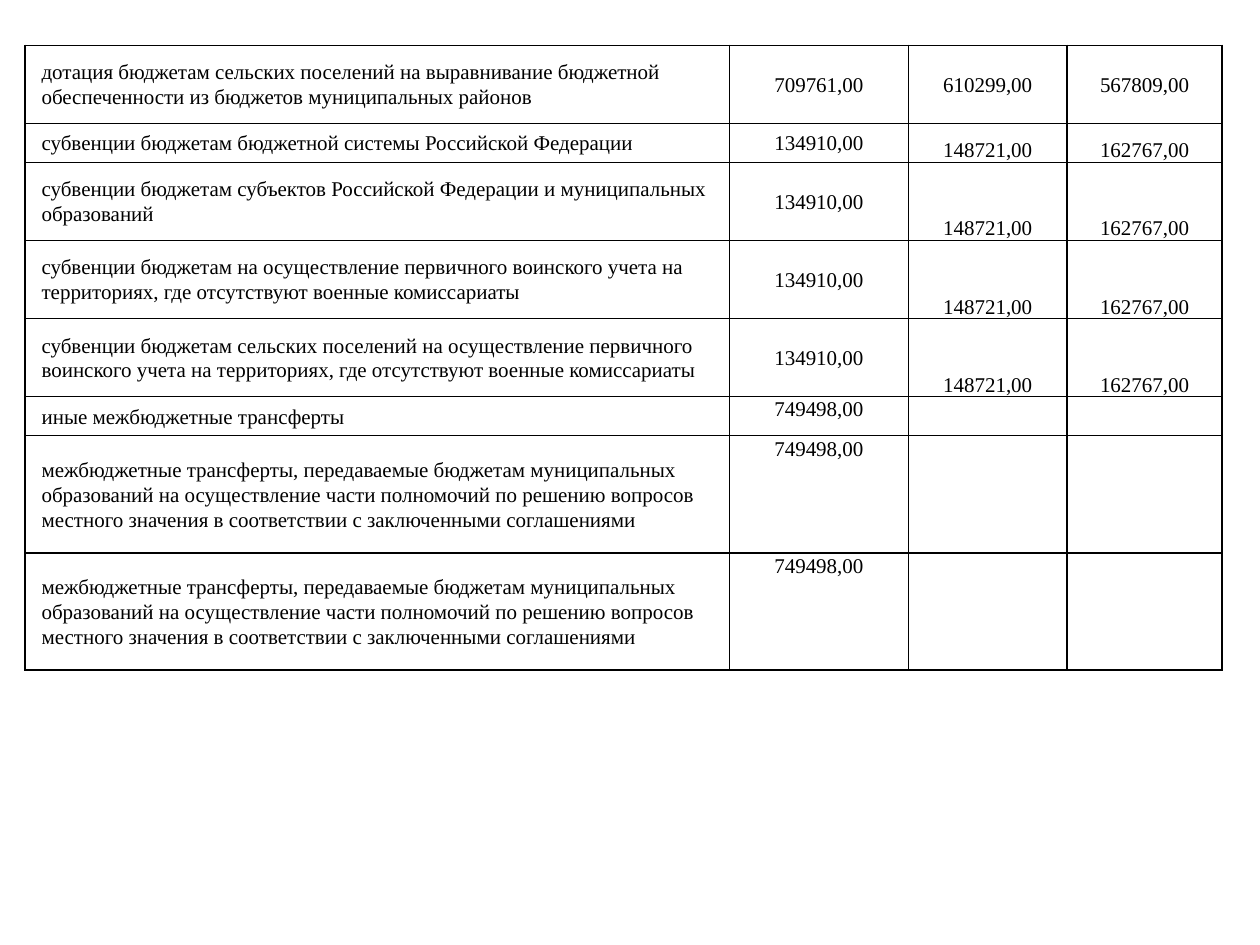
"""Build a slide with a table of transfers to municipal budgets over three years."""
from lxml import etree
from pptx import Presentation
from pptx.dml.color import RGBColor
from pptx.enum.text import MSO_ANCHOR, PP_ALIGN
from pptx.oxml.ns import qn
from pptx.util import Inches, Pt

TOP, MIDDLE, BOTTOM = MSO_ANCHOR.TOP, MSO_ANCHOR.MIDDLE, MSO_ANCHOR.BOTTOM
LEFT, CENTER = PP_ALIGN.LEFT, PP_ALIGN.CENTER
BLACK = RGBColor(0, 0, 0)
FONT_NAME = "Times New Roman"
FONT_SIZE = Pt(12)
LINE_HEIGHT = 0.31
COLUMN_WIDTHS = [5.59, 1.42, 1.26, 1.23]

SUBVENTIONS = ["134910,00", "148721,00", "162767,00"]
TRANSFERS = ["749498,00", "", ""]
AGREEMENT_TRANSFERS = (
    "межбюджетные трансферты, передаваемые бюджетам муниципальных образований "
    "на осуществление части полномочий по решению вопросов местного значения "
    "в соответствии с заключенными соглашениями"
)
GRANT_ANCHORS = [MIDDLE, MIDDLE, MIDDLE, MIDDLE]
SUBVENTION_ANCHORS = [MIDDLE, MIDDLE, BOTTOM, BOTTOM]
TRANSFER_ANCHORS = [MIDDLE, TOP, TOP, TOP]

ROWS = [
    (2, GRANT_ANCHORS,
     ["дотация бюджетам сельских поселений на выравнивание бюджетной "
      "обеспеченности из бюджетов муниципальных районов",
      "709761,00", "610299,00", "567809,00"]),
    (1, SUBVENTION_ANCHORS,
     ["субвенции бюджетам бюджетной системы Российской Федерации", *SUBVENTIONS]),
    (2, SUBVENTION_ANCHORS,
     ["субвенции бюджетам субъектов Российской Федерации и муниципальных образований",
      *SUBVENTIONS]),
    (2, SUBVENTION_ANCHORS,
     ["субвенции бюджетам на осуществление первичного воинского учета на "
      "территориях, где отсутствуют военные комиссариаты", *SUBVENTIONS]),
    (2, SUBVENTION_ANCHORS,
     ["субвенции бюджетам сельских поселений на осуществление первичного "
      "воинского учета на территориях, где отсутствуют военные комиссариаты",
      *SUBVENTIONS]),
    (1, TRANSFER_ANCHORS, ["иные межбюджетные трансферты", *TRANSFERS]),
    (3, TRANSFER_ANCHORS, [AGREEMENT_TRANSFERS, *TRANSFERS]),
    (3, TRANSFER_ANCHORS, [AGREEMENT_TRANSFERS, *TRANSFERS]),
]


def add_borders(cell):
    """Draw a thin black line on each side of a cell."""
    properties = cell._tc.get_or_add_tcPr()
    for side in ("a:lnL", "a:lnR", "a:lnT", "a:lnB"):
        line = etree.SubElement(properties, qn(side), w=str(Pt(1)))
        fill = etree.SubElement(line, qn("a:solidFill"))
        etree.SubElement(fill, qn("a:srgbClr"), val=str(BLACK))


def format_cell(cell, text, anchor, is_label):
    """Write the text of a cell and set its layout and font."""
    add_borders(cell)
    cell.fill.background()
    cell.vertical_anchor = anchor
    cell.margin_left = cell.margin_right = Inches(0.01)
    cell.margin_top = cell.margin_bottom = 0
    paragraph = cell.text_frame.paragraphs[0]
    paragraph.alignment = LEFT if is_label else CENTER
    paragraph.line_spacing = 1.07
    if is_label:
        paragraph._p.get_or_add_pPr().set("marL", str(Inches(0.12)))
    if not text:
        etree.SubElement(paragraph._p, qn("a:endParaRPr"), sz="1200")
        return
    paragraph.text = text
    font = paragraph.runs[0].font
    font.name = FONT_NAME
    font.size = FONT_SIZE
    font.color.rgb = BLACK


presentation = Presentation()
presentation.slide_width = Inches(10)
presentation.slide_height = Inches(7.5)
slide = presentation.slides.add_slide(presentation.slide_layouts[6])

line_count = sum(lines for lines, anchors, texts in ROWS)
table = slide.shapes.add_table(
    len(ROWS), len(COLUMN_WIDTHS), Inches(0.2), Inches(0.36),
    Inches(sum(COLUMN_WIDTHS)), Inches(LINE_HEIGHT * line_count),
).table
table.first_row = False
table.horz_banding = False

for column, width in zip(table.columns, COLUMN_WIDTHS):
    column.width = Inches(width)

for row, (lines, anchors, texts) in zip(table.rows, ROWS):
    row.height = Inches(LINE_HEIGHT * lines)
    for index, (cell, text, anchor) in enumerate(zip(row.cells, texts, anchors)):
        format_cell(cell, text, anchor, index == 0)

presentation.save("out.pptx")
